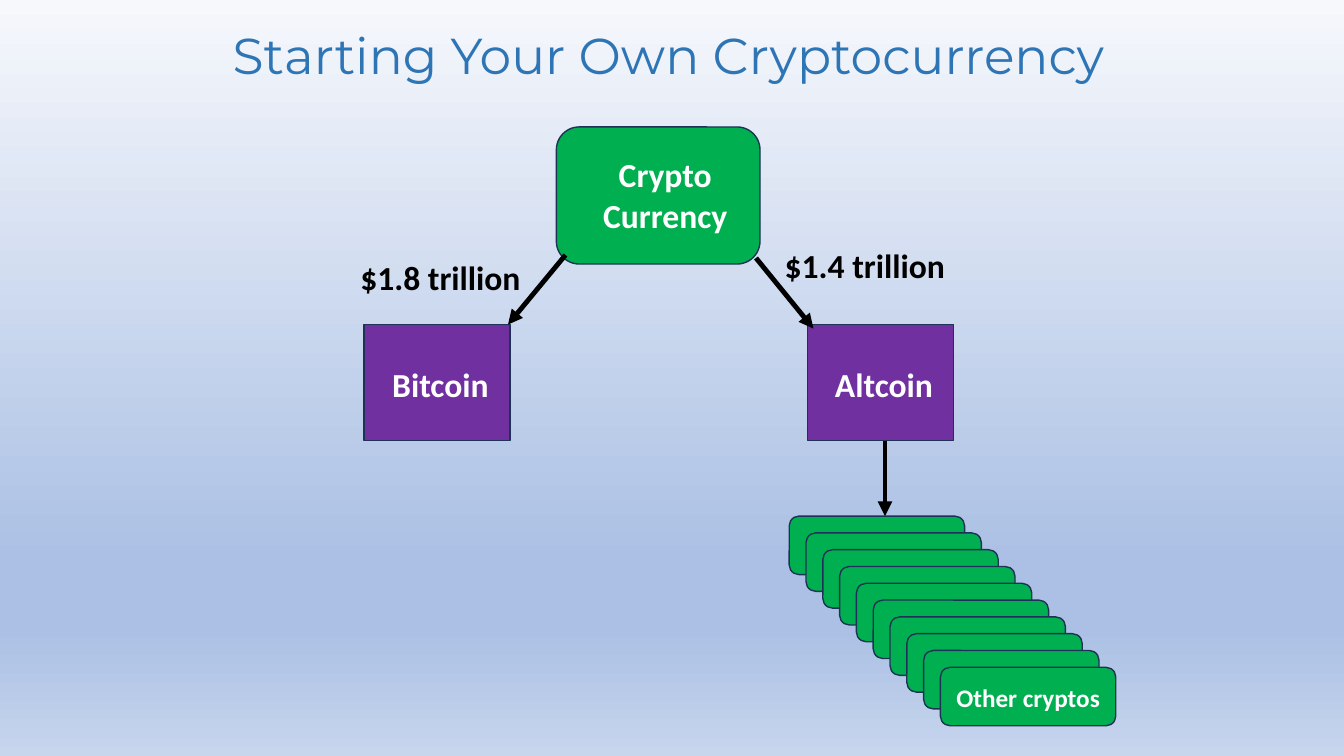
from lxml import etree
from pptx import Presentation
from pptx.dml.color import RGBColor
from pptx.enum.shapes import MSO_CONNECTOR, MSO_SHAPE
from pptx.enum.text import MSO_ANCHOR, PP_ALIGN
from pptx.oxml.ns import qn
from pptx.util import Inches, Pt

LINE = MSO_CONNECTOR.STRAIGHT
RECT = MSO_SHAPE.RECTANGLE
ROUND = MSO_SHAPE.ROUNDED_RECTANGLE
MIDDLE = MSO_ANCHOR.MIDDLE
CENTER = PP_ALIGN.CENTER

WIDE, HIGH = Inches(13.33), Inches(7.5)
COLS, ROWS = 80, 45

COLORS = {
    "title": "2E75B6",
    "green": "00B050",
    "purple": "7030A0",
    "edge": "1E3256",
    "white": "FFFFFF",
    "black": "000000",
}
FADE = {0: "F6F8FC", 74: "ABC0E4", 83: "ABC0E4", 100: "C7D5ED"}

TITLE = {"name": "Montserrat", "size": Pt(36), "bold": False}
LABEL = {"name": "Calibri", "size": Pt(24), "bold": True}
SMALL = {**LABEL, "size": Pt(18)}


def color(name):
    return RGBColor.from_string(COLORS[name])


def grid(*cells):
    return [
        round(cell * (HIGH / ROWS if i % 2 else WIDE / COLS))
        for i, cell in enumerate(cells)
    ]


def write(frame, text, form, tint):
    frame.word_wrap = True
    frame.text = text
    para = frame.paragraphs[0]
    para.alignment = CENTER
    font = para.runs[0].font
    for key, value in form.items():
        setattr(font, key, value)
    font.color.rgb = color(tint)


def shade(slide):
    fill = slide.background.fill
    fill.gradient()
    fill.gradient_angle = 270
    stops = next(slide.element.iter(qn("a:gsLst")))
    for stop in list(stops):
        stops.remove(stop)
    for place, tint in FADE.items():
        stop = etree.SubElement(stops, qn("a:gs"), pos=str(place * 1000))
        etree.SubElement(stop, qn("a:srgbClr"), val=tint)


def head(slide, text, cells):
    title = slide.shapes.title
    title.left, title.top, title.width, title.height = grid(*cells)
    write(title.text_frame, text, TITLE, "title")
    title.text_frame.vertical_anchor = MIDDLE


def box(slide, kind, cells, tint):
    shape = slide.shapes.add_shape(kind, *grid(*cells))
    shape.shadow.inherit = False
    shape.fill.solid()
    shape.fill.fore_color.rgb = color(tint)
    shape.line.color.rgb = color("edge")
    shape.line.width = Pt(1)


def label(slide, text, cells, tint="white", form=LABEL):
    area = slide.shapes.add_textbox(*grid(*cells))
    write(area.text_frame, text, form, tint)


def arrow(slide, cells):
    link = slide.shapes.add_connector(LINE, *grid(*cells))
    link.line.color.rgb = color("black")
    link.line.width = Pt(3.5)
    edge = next(link.element.iter(qn("a:ln")))
    etree.SubElement(edge, qn("a:tailEnd"), type="triangle")
    etree.SubElement(edge.getparent(), qn("a:effectLst"))


def stack(slide, left, top, count, text):
    for step in range(count):
        box(slide, ROUND, (left + step, top + step, 10.44, 3.48), "green")
    last = count - 1
    label(slide, text, (left + last, top + last + 0.6, 10.44, 2.4), form=SMALL)


def main():
    deck = Presentation()
    deck.slide_width, deck.slide_height = WIDE, HIGH
    slide = deck.slides.add_slide(deck.slide_layouts[5])
    shade(slide)
    head(slide, "Starting Your Own Cryptocurrency", (0, 1.08, 79.56, 4.26))

    box(slide, ROUND, (33.12, 7.56, 12.12, 8.16), "green")
    label(slide, "Crypto Currency", (35.16, 8.88, 8.88, 5.46))
    for text, left in (("Bitcoin", 21.66), ("Altcoin", 48.06)):
        box(slide, RECT, (left, 19.32, 8.7, 6.9), "purple")
        label(slide, text, (left + 0.54, 21.36, 8.04, 3))
    stack(slide, 46.98, 30.72, 10, "Other cryptos")

    for cells in (
        (33.66, 15.18, 30.24, 19.32),
        (45, 15.36, 48.42, 19.56),
        (52.68, 26.28, 52.68, 30.72),
    ):
        arrow(slide, cells)
    label(slide, "$1.8 trillion", (20.16, 15, 12.12, 3), "black")
    label(slide, "$1.4 trillion", (45.42, 14.28, 12.12, 3), "black")
    deck.save("out.pptx")


if __name__ == "__main__":
    main()
